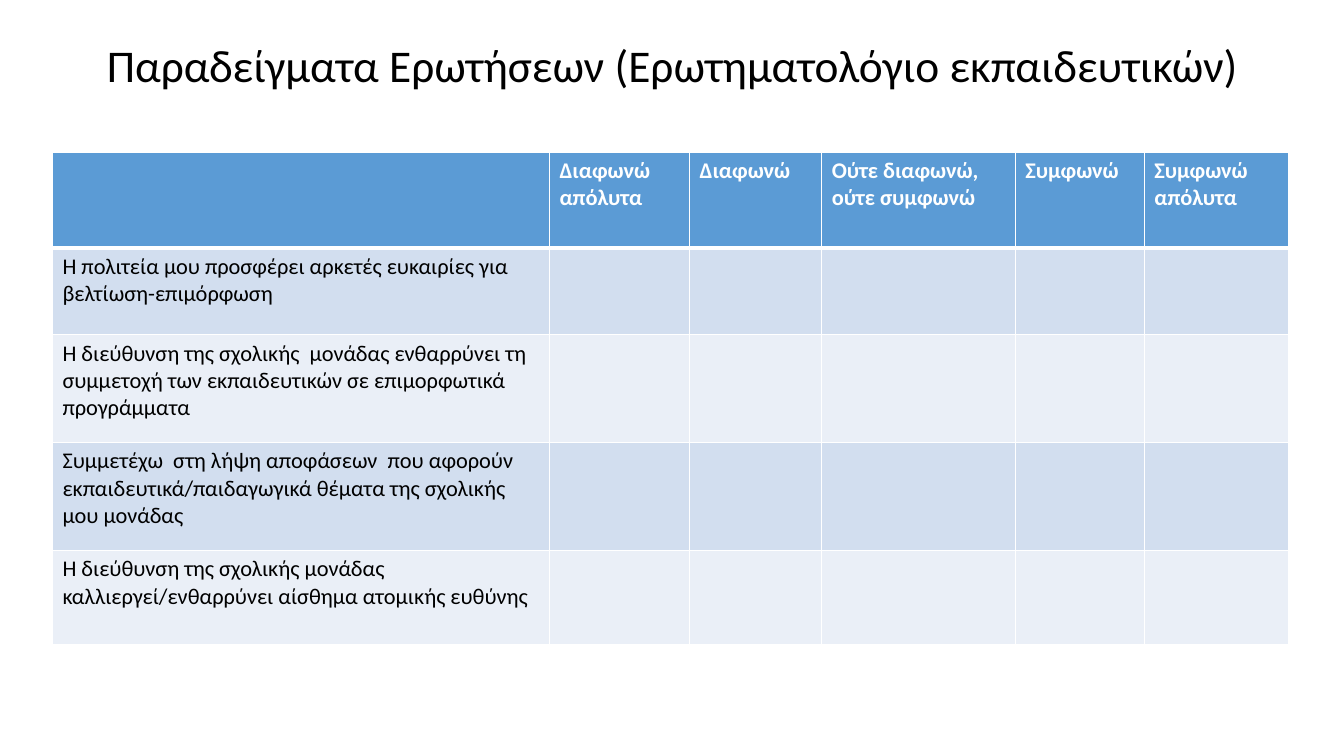
from dataclasses import dataclass

from lxml.etree import SubElement
from pptx import Presentation
from pptx.dml.color import RGBColor as Rgb
from pptx.enum.text import MSO_ANCHOR as Anchor, PP_ALIGN as Align
from pptx.oxml.ns import qn
from pptx.util import Inches, Pt


@dataclass(frozen=True)
class Theme:
    """Colours, font and type sizes of the slide."""
    font: str = "Calibri"
    title_size: float = 32.4
    table_size: float = 16
    ink: str = "000000"
    white: str = "FFFFFF"
    header: str = "5B9BD5"
    bands: tuple = ("D2DEEF", "EAEFF7")


THEME = Theme()
TITLE = "Παραδείγματα Ερωτήσεων (Ερωτηματολόγιο εκπαιδευτικών)"
ANSWERS = [
    "Διαφωνώ απόλυτα",
    "Διαφωνώ",
    "Ούτε διαφωνώ, ούτε συμφωνώ",
    "Συμφωνώ",
    "Συμφωνώ απόλυτα",
]
QUESTIONS = [
    "Η πολιτεία μου προσφέρει αρκετές ευκαιρίες για βελτίωση-επιμόρφωση",
    "Η διεύθυνση της σχολικής  μονάδας ενθαρρύνει τη συμμετοχή των "
    "εκπαιδευτικών σε επιμορφωτικά προγράμματα",
    "Συμμετέχω  στη λήψη αποφάσεων  που αφορούν εκπαιδευτικά/παιδαγωγικά "
    "θέματα της σχολικής μου μονάδας",
    "Η διεύθυνση της σχολικής μονάδας καλλιεργεί/ενθαρρύνει αίσθημα "
    "ατομικής ευθύνης",
]
COLUMN_WIDTHS = [4.93, 1.39, 1.31, 1.92, 1.28, 1.43]
ROW_HEIGHTS = [0.95, 0.86, 1.07, 1.07, 0.94]


def style_font(paragraph, size, color, bold=False):
    """Set the font of a whole paragraph."""
    font = paragraph.font
    font.name, font.size, font.bold = THEME.font, Pt(size), bold
    font.color.rgb = Rgb.from_string(color)


def add_title(slide, text):
    """Add the centred slide title."""
    frame = slide.shapes.add_textbox(
        Inches(0.92), Inches(0.31), Inches(11.5), Inches(0.72)).text_frame
    frame.word_wrap = True
    frame.margin_left = frame.margin_right = 0
    frame.vertical_anchor = Anchor.MIDDLE
    heading = frame.paragraphs[0]
    heading.text = text
    heading.alignment = Align.CENTER
    heading.line_spacing = 0.9
    style_font(heading, THEME.title_size, THEME.ink)


def set_borders(cell, top, bottom):
    """Draw white cell borders, with top and bottom widths in points."""
    properties = cell._tc.get_or_add_tcPr()
    for side, width in (("L", 1), ("R", 1), ("T", top), ("B", bottom)):
        line = SubElement(properties, qn(f"a:ln{side}"), w=str(Pt(width)))
        fill = SubElement(line, qn("a:solidFill"))
        SubElement(fill, qn("a:srgbClr"), val=THEME.white)


def fill_cell(cell, text, row):
    """Write and style one cell according to its row."""
    is_header = row == 0
    set_borders(cell, 3 if row == 1 else 1, 3 if is_header else 1)
    background = THEME.header if is_header else THEME.bands[(row - 1) % 2]
    cell.fill.solid()
    cell.fill.fore_color.rgb = Rgb.from_string(background)
    cell.text = text
    style_font(cell.text_frame.paragraphs[0], THEME.table_size,
               THEME.white if is_header else THEME.ink, is_header)


def add_questionnaire(slide, answers, questions):
    """Add the table of questions against the answer scale."""
    rows = [["", *answers]] + [[text] + [""] * len(answers) for text in questions]
    table = slide.shapes.add_table(
        len(rows), len(rows[0]), Inches(0.52), Inches(1.51),
        Inches(sum(COLUMN_WIDTHS)), Inches(sum(ROW_HEIGHTS))).table
    for column, width in zip(table.columns, COLUMN_WIDTHS):
        column.width = Inches(width)
    for row, height in zip(table.rows, ROW_HEIGHTS):
        row.height = Inches(height)
    for row, texts in enumerate(rows):
        for column, text in enumerate(texts):
            fill_cell(table.cell(row, column), text, row)


def main():
    """Build and save the questionnaire slide."""
    deck = Presentation()
    deck.slide_width, deck.slide_height = Inches(13.33), Inches(7.5)
    slide = deck.slides.add_slide(deck.slide_layouts[6])
    add_title(slide, TITLE)
    add_questionnaire(slide, ANSWERS, QUESTIONS)
    deck.save("out.pptx")


if __name__ == "__main__":
    main()
